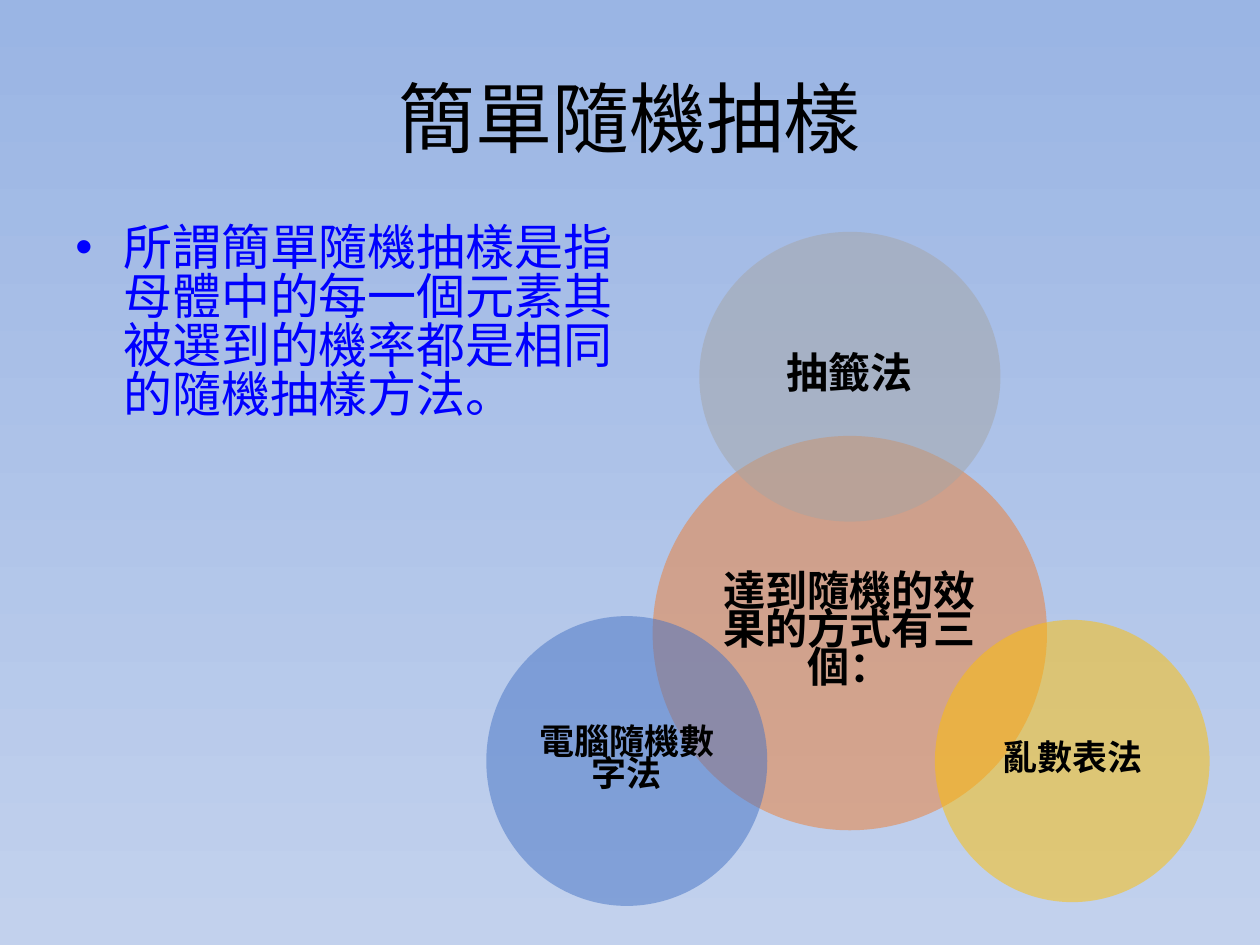
"""Build the simple random sampling slide with four overlapping circles."""
import pptx
import pptx.util
import pptx.dml.color
import pptx.enum.shapes
import pptx.enum.text
import pptx.oxml.ns
from lxml import etree

Inches = pptx.util.Inches
ALIGN = pptx.enum.text.PP_ALIGN
ANCHOR = pptx.enum.text.MSO_ANCHOR
FONT = "Noto Sans CJK SC"
COLORS = {
    "sky": "9AB5E4", "haze": "C2D1ED", "black": "000000", "blue": "0000FF",
    "orange": "ED7D31", "gray": "A5A5A5", "gold": "FFC000", "navy": "4472C4",
}
TITLE = "簡單隨機抽樣"
BODY = "所謂簡單隨機抽樣是指母體中的每一個元素其被選到的機率都是相同的隨機抽樣方法。"
CIRCLES = [
    ("達到隨機的效果的方式有三個：", (5.18, 3.46, 3.13, 3.13), "orange", 24),
    ("抽籤法", (5.55, 1.84, 2.39, 2.3), "gray", 24),
    ("亂數表法", (7.42, 4.92, 2.18, 2.24), "gold", 20),
    ("電腦隨機數字法", (3.86, 4.89, 2.23, 2.3), "navy", 20),
]


def rgb(name):
    return pptx.dml.color.RGBColor.from_string(COLORS[name])


def sub(parent, tag, **attrs):
    return etree.SubElement(parent, pptx.oxml.ns.qn(tag), attrs)


def write(tf, text, size, color="black", bold=False, align=ALIGN.CENTER,
          anchor=ANCHOR.MIDDLE, spacing=None, inset=None, bullet=None):
    tf.word_wrap = True
    tf.vertical_anchor = anchor
    if inset is not None:
        tf.margin_left = tf.margin_right = Inches(inset)
        tf.margin_top = tf.margin_bottom = Inches(inset)
    p = tf.paragraphs[0]
    p.alignment = align
    p.line_spacing = spacing
    if bullet:
        pPr = p._p.get_or_add_pPr()
        pPr.set("marL", str(Inches(0.38)))
        pPr.set("indent", str(Inches(-0.38)))
        sub(pPr, "a:buFont", typeface="Arial")
        sub(pPr, "a:buChar", char=bullet)
    r = p.add_run()
    r.text = text
    r.font.size = pptx.util.Pt(size)
    r.font.bold = bold
    r.font.color.rgb = rgb(color)
    r.font.name = FONT
    sub(r._r.get_or_add_rPr(), "a:ea", typeface=FONT)


def place(shape, *box):
    shape.left, shape.top, shape.width, shape.height = map(Inches, box)


def add_circle(s, text, box, color, size):
    sp = s.shapes.add_shape(pptx.enum.shapes.MSO_SHAPE.OVAL, *map(Inches, box))
    sp.shadow.inherit = False
    sp.fill.solid()
    sp.fill.fore_color.rgb = rgb(color)
    sub(sp.fill._xPr.find(".//" + pptx.oxml.ns.qn("a:srgbClr")), "a:alpha", val="50000")
    sp.line.fill.background()
    write(sp.text_frame, text, size, bold=True, spacing=0.75, inset=0.03)


def main():
    prs = pptx.Presentation()
    prs.slide_width, prs.slide_height = Inches(10), Inches(7.5)
    s = prs.slides.add_slide(prs.slide_layouts[5])

    fill = s.background.fill
    fill.gradient()
    fill.gradient_angle = 270
    for stop, name, position in zip(fill.gradient_stops, ("sky", "haze"), (0, 1)):
        stop.color.rgb = rgb(name)
        stop.position = position

    place(s.shapes.title, 0.5, 0.3, 9, 1.25)
    write(s.shapes.title.text_frame, TITLE, 44)
    body = s.shapes.add_textbox(*map(Inches, (0.5, 1.75, 4.5, 4.95)))
    write(body.text_frame, BODY, 28, color="blue", align=ALIGN.LEFT,
          anchor=ANCHOR.TOP, spacing=0.83, bullet="•")
    for circle in CIRCLES:
        add_circle(s, *circle)
    prs.save("out.pptx")


if __name__ == "__main__":
    main()
